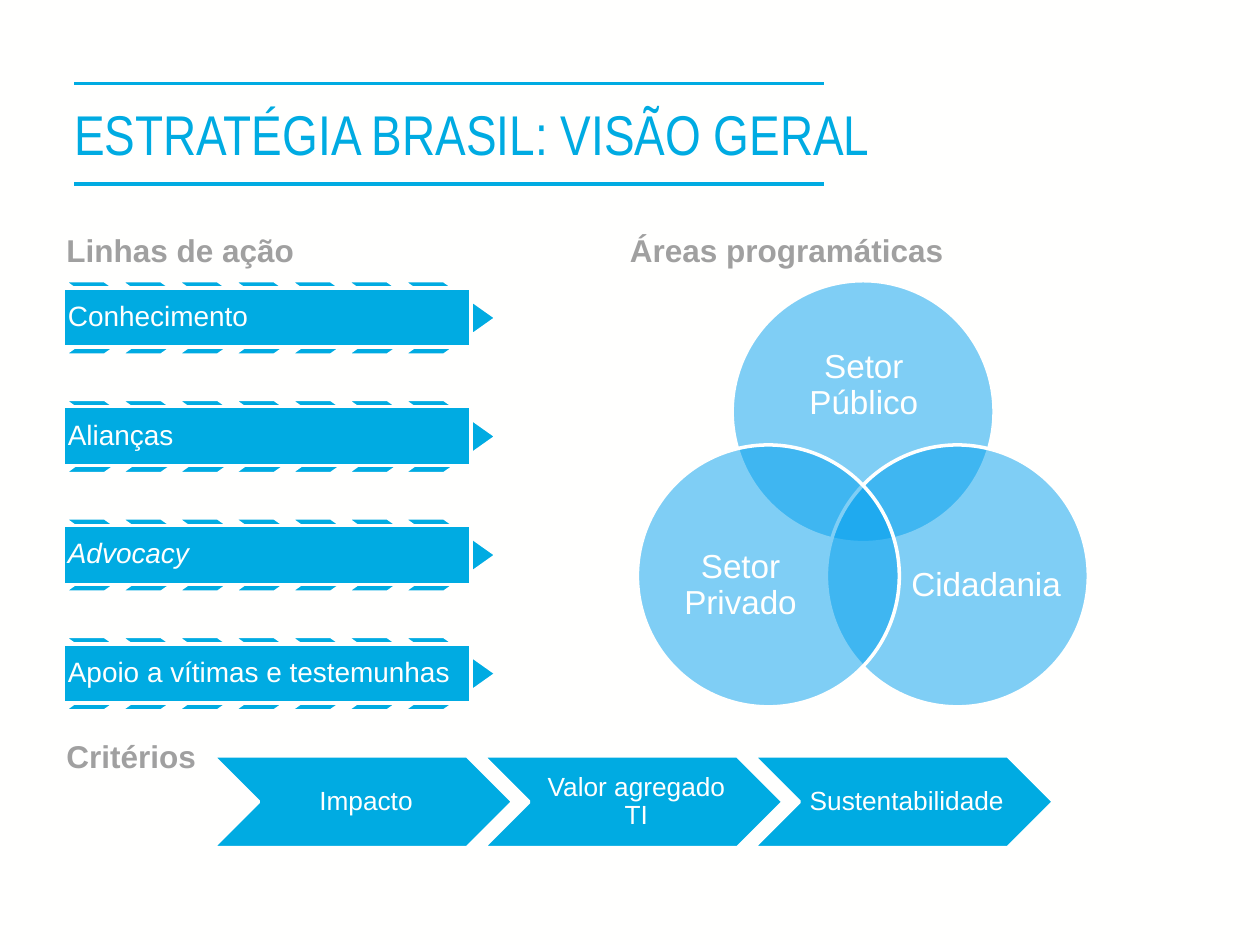
"""Build the slide with the overview of the Brazil strategy."""
import pptx
import pptx.dml.color
import pptx.enum.shapes
import pptx.enum.text
import pptx.oxml
import pptx.oxml.ns
import pptx.util

Cm = pptx.util.Cm
Pt = pptx.util.Pt
RGBColor = pptx.dml.color.RGBColor
Shape = pptx.enum.shapes.MSO_SHAPE
Align = pptx.enum.text.PP_ALIGN
Anchor = pptx.enum.text.MSO_ANCHOR

BLUE = RGBColor(0x00, 0xAB, 0xE2)
CIRCLE_BLUE = RGBColor(0x00, 0x9F, 0xEE)
GRAY = RGBColor(0xA0, 0xA0, 0xA0)
WHITE = RGBColor(0xFF, 0xFF, 0xFE)

ACTIONS = ["Conhecimento", "Alianças", "Advocacy", "Apoio a vítimas e testemunhas"]
CRITERIA = ["Impacto", "Valor agregado TI", "Sustentabilidade"]
HEADINGS = [
    ("Linhas de ação", 1.09, 4.52, 5.16),
    ("Critérios", 1.09, 14.73, 3.15),
    ("Áreas programáticas", 12.45, 4.52, 6.88),
]
AREAS = [
    ("Setor Público", (14.76, 5.66), (15.47, 6.58, 3.89, 2.39)),
    ("Cidadania", (16.66, 8.97), (18.29, 10.34, 3.18, 2.92)),
    ("Setor Privado", (12.85, 8.97), (13.34, 10.34, 3.18, 2.92)),
]


def write_text(frame, text, *, size, color=WHITE, font="Arial", bold=False,
               italic=False, align=Align.LEFT, spacing=0.9):
    paragraph = frame.paragraphs[0]
    paragraph.alignment = align
    paragraph.line_spacing = spacing
    span = paragraph.add_run()
    span.text = text
    span.font.name = font
    span.font.size = Pt(size)
    span.font.color.rgb = color
    span.font.bold = bold
    span.font.italic = italic


class StrategyPage:
    def __init__(self, page):
        self.page = page
        self.line_width = Pt(2)
        background = page.background.fill
        background.solid()
        background.fore_color.rgb = WHITE

    def rule(self, left, right, top):
        line = self.page.shapes.add_connector(
            pptx.enum.shapes.MSO_CONNECTOR.STRAIGHT, Cm(left), Cm(top), Cm(right), Cm(top))
        line.line.color.rgb = BLUE
        line.line.width = self.line_width
        line._element.spPr.append(pptx.oxml.parse_xml(
            f'<a:effectLst {pptx.oxml.ns.nsdecls("a")}/>'))

    def shape(self, kind, left, top, width, height, color=BLUE, opacity=None, adjust=None):
        shape = self.page.shapes.add_shape(kind, Cm(left), Cm(top), Cm(width), Cm(height))
        shape.shadow.inherit = False
        shape.fill.solid()
        shape.fill.fore_color.rgb = color
        shape.line.color.rgb = WHITE
        shape.line.width = self.line_width
        if adjust is not None:
            shape.adjustments[0] = adjust
        if opacity is not None:
            tint = shape._element.spPr.find(".//" + pptx.oxml.ns.qn("a:srgbClr"))
            tint.append(pptx.oxml.parse_xml(
                f'<a:alpha {pptx.oxml.ns.nsdecls("a")} val="{opacity * 1000}"/>'))

    def text(self, text, left, top, width, height, insets=(0, 0, 0, 0),
             anchor=Anchor.MIDDLE, wrap=True, **style):
        box = self.page.shapes.add_textbox(Cm(left), Cm(top), Cm(width), Cm(height))
        frame = box.text_frame
        frame.word_wrap = wrap
        frame.vertical_anchor = anchor
        frame.margin_left, frame.margin_top, frame.margin_right, frame.margin_bottom = map(
            Cm, insets)
        write_text(frame, text, **style)

    def heading(self, text, left, top, width):
        self.text(text, left, top, width, 1.02, insets=(0.25, 0.13, 0.25, 0.13),
                  anchor=Anchor.TOP, wrap=False, size=18, color=GRAY, bold=True, spacing=1)

    def area(self, text, corner, text_place):
        self.shape(Shape.OVAL, *corner, 5.28, 5.28, color=CIRCLE_BLUE, opacity=50)
        self.text(text, *text_place, size=19, align=Align.CENTER)

    def action(self, text, top):
        left = 1.27
        for column in range(7):
            self.shape(Shape.CHEVRON, left + column * 1.14, top, 1.9, 1.5, adjust=0.706)
        bar = (left, top + 0.15, 8.23, 1.19)
        self.shape(Shape.RECTANGLE, *bar)
        self.text(text, *bar, insets=(0.1, 0.1, 0.1, 0.1), size=16,
                  italic=text == "Advocacy")

    def criterion(self, text, left):
        top, height = 15.24, 1.85
        self.shape(Shape.CHEVRON, left, top, 6.05, height)
        self.text(text, left + 0.93, top, 4.19, height, insets=(0.18, 0.05, 0.05, 0.05),
                  size=15, align=Align.CENTER)


def main():
    deck = pptx.Presentation()
    deck.slide_width, deck.slide_height = Cm(25.4), Cm(19.05)
    strategy = StrategyPage(deck.slides.add_slide(deck.slide_layouts[6]))
    for top in (1.68, 3.71):
        strategy.rule(1.5, 16.61, top)
    strategy.text("ESTRATÉGIA BRASIL: VISÃO GERAL", 1.5, 1.57, 17.6, 2.21,
                  size=32, color=BLUE, font="Arial Narrow", spacing=1)
    for area in AREAS:
        strategy.area(*area)
    for row, action in enumerate(ACTIONS):
        strategy.action(action, 5.66 + row * 2.39)
    for heading in HEADINGS:
        strategy.heading(*heading)
    for column, criterion in enumerate(CRITERIA):
        strategy.criterion(criterion, 4.29 + column * 5.45)
    deck.save("out.pptx")


if __name__ == "__main__":
    main()
